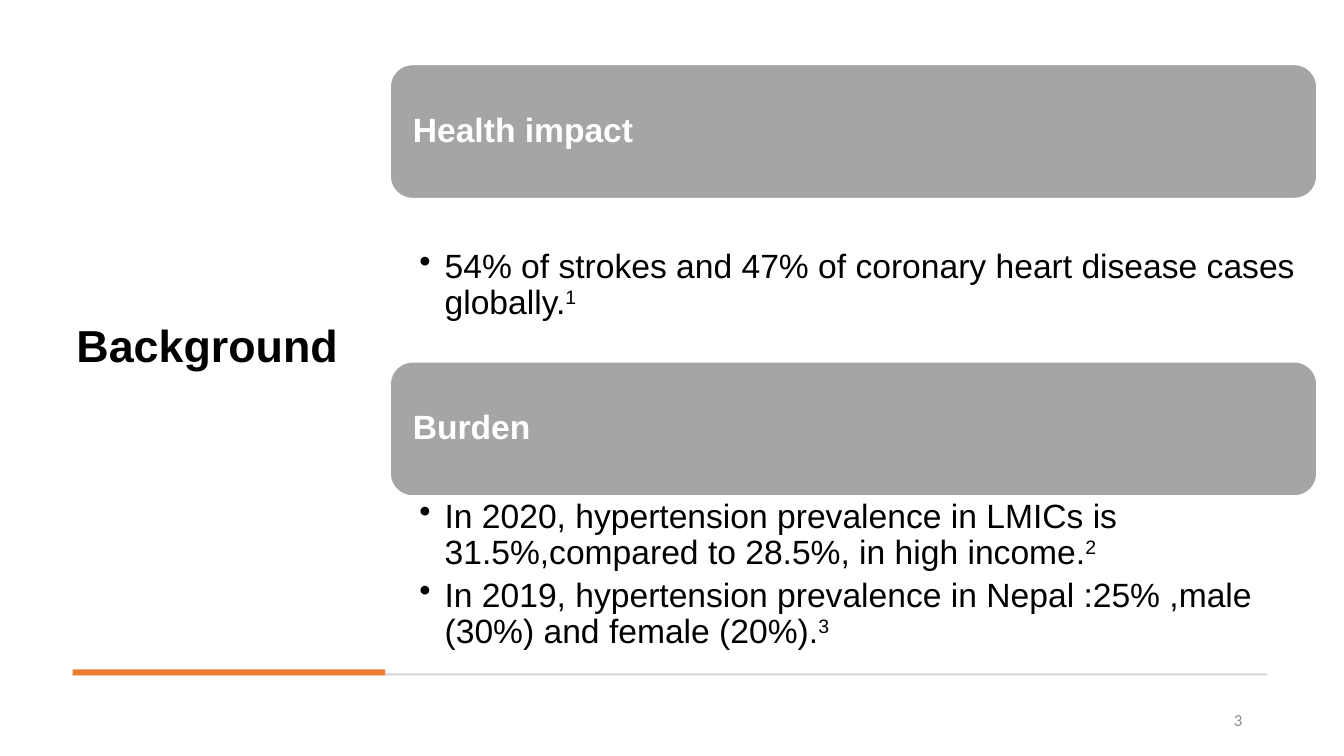
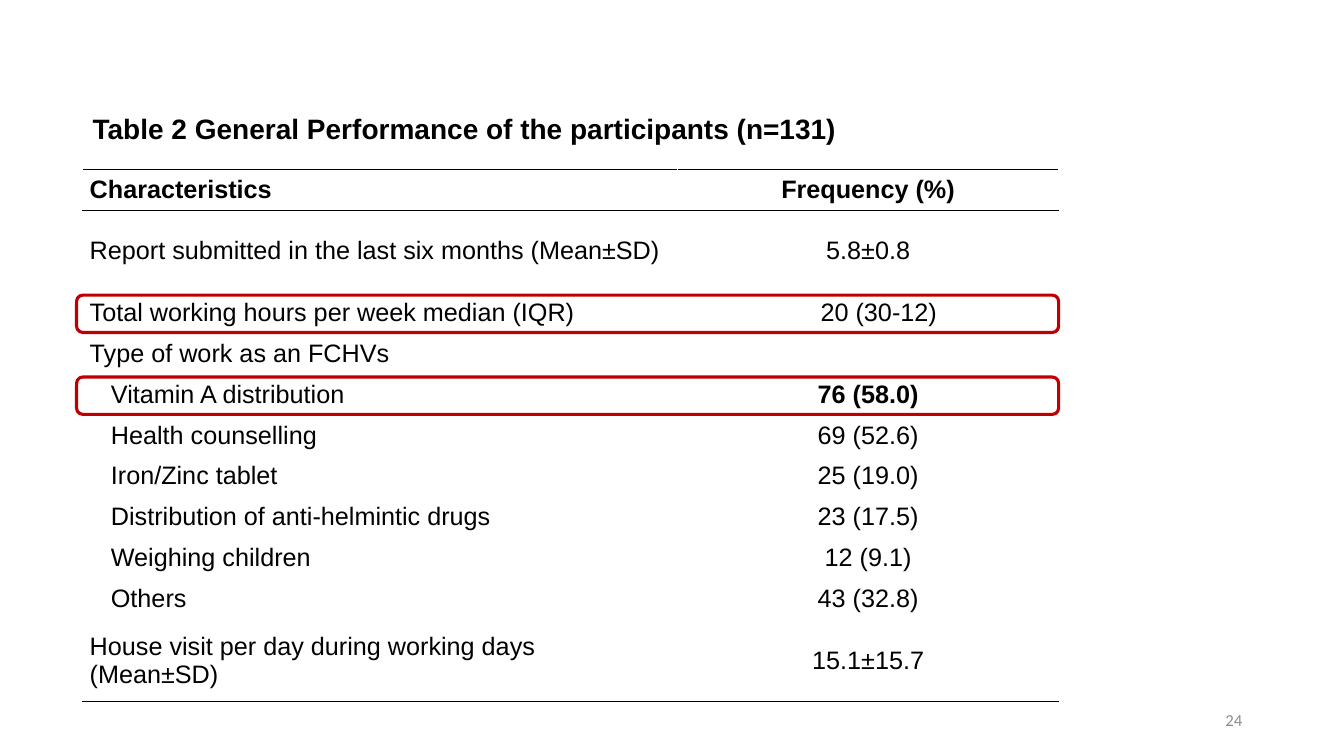
"""Build two slides on hypertension background and volunteer performance."""
from dataclasses import dataclass

from lxml.etree import SubElement
from pptx import Presentation
from pptx.dml.color import RGBColor
from pptx.enum.shapes import MSO_SHAPE as Shape
from pptx.enum.text import MSO_ANCHOR as Anchor, PP_ALIGN as Align
from pptx.oxml.ns import qn
from pptx.util import Inches, Pt

PANELS = [
    ("Health impact", 1.62, 0.5, [
        ("54% of strokes and 47% of coronary heart disease cases globally.", "1"),
    ]),
    ("Burden", 1.55, 0.03, [
        ("In 2020, hypertension prevalence in LMICs is 31.5%,compared to 28.5%, in high income.", "2"),
        ("In 2019, hypertension prevalence in Nepal :25% ,male (30%) and female (20%).", "3"),
    ]),
]
TABLE_TITLE = "Table 2 General Performance of the participants (n=131)"
ROWS = [
    ("Characteristics", "Frequency (%)"),
    ("Report submitted in the last six months (Mean±SD)", "5.8±0.8"),
    ("Total working hours per week median (IQR)", "20 (30-12)"),
    ("Type of work as an FCHVs", ""),
    ("Vitamin A distribution", "76 (58.0)"),
    ("Health counselling", "69 (52.6)"),
    ("Iron/Zinc tablet", "25 (19.0)"),
    ("Distribution of anti-helmintic drugs", "23 (17.5)"),
    ("Weighing children", "12 (9.1)"),
    ("Others", "43 (32.8)"),
    ("House visit per day during working days (Mean±SD)", "15.1±15.7"),
]
ROW_UNITS = [1, 2, 1, 1, 1, 1, 1, 1, 1, 1, 2]
BOLD_CELLS = {(0, 0), (0, 1), (4, 1)}
INDENTED_CELLS = {(2, 1)} | {(row, 0) for row in range(4, 10)}
RULES = {0: ("a:lnT", "a:lnB"), 1: ("a:lnT",), 10: ("a:lnB",)}
CALLOUT_ROWS = (2, 4)


@dataclass(frozen=True)
class Theme:
    """Hold the shared colours, fonts and type sizes."""

    font: str = "Arial"
    number_font: str = "Calibri"
    black: str = "000000"
    white: str = "FFFFFF"
    panel: str = "A5A5A5"
    accent: str = "ED7D31"
    rule: str = "D5D5D5"
    callout: str = "C00000"
    number: str = "8C8C8C"
    title_size: int = 32
    body_size: int = 24
    caption_size: int = 20
    cell_size: int = 18
    number_size: int = 12


THEME = Theme()


def apply(target, **values):
    """Set attributes from a dict of format values."""
    for name, value in values.items():
        setattr(target, name, value)


def add_span(para, text, size, color=THEME.black, bold=False, font=THEME.font):
    """Append one formatted run to a paragraph."""
    span = para.add_run()
    span.text = text
    apply(span.font, name=font, size=Pt(size), bold=bold)
    span.font.color.rgb = RGBColor.from_string(color)
    return span


def set_frame(box, insets=(0.1, 0.05, 0.1, 0.05), anchor=Anchor.MIDDLE):
    """Wrap the text of a box and set its insets and anchor."""
    frame = box.text_frame
    sides = ("margin_left", "margin_top", "margin_right", "margin_bottom")
    apply(frame, word_wrap=True, vertical_anchor=anchor,
          **{side: Inches(inset) for side, inset in zip(sides, insets)})
    return frame


def add_text(page, area, text, size, align=Align.LEFT, **style):
    """Add a text box with one line of middle-anchored text."""
    para = set_frame(page.shapes.add_textbox(*map(Inches, area))).paragraphs[0]
    apply(para, alignment=align, line_spacing=0.9)
    add_span(para, text, size, **style)


def add_block(page, kind, area, fill=None, line=None, width=1):
    """Add a preset shape with optional fill and outline."""
    box = page.shapes.add_shape(kind, *map(Inches, area))
    box.shadow.inherit = False
    for paint, color in ((box.fill, fill), (box.line.fill, line)):
        if color:
            paint.solid()
            paint.fore_color.rgb = RGBColor.from_string(color)
        else:
            paint.background()
    if line:
        box.line.width = Pt(width)
    return box


def add_bullet(para, text, note):
    """Write a bullet with a superscript reference."""
    apply(para, line_spacing=0.9, space_after=Pt(5))
    props = para._p.get_or_add_pPr()
    props.set("marL", str(Inches(0.25)))
    props.set("indent", str(-Inches(0.25)))
    SubElement(props, qn("a:buChar"), char="•")
    add_span(para, text, THEME.body_size)
    add_span(para, note, THEME.body_size).font._element.set("baseline", "30000")


def add_panels(page, left=3.87, top=0.64, width=9.19, header=1.33):
    """Stack headed panels, each followed by its bullets."""
    for heading, height, inset, bullets in PANELS:
        box = add_block(page, Shape.ROUNDED_RECTANGLE, (left, top, width, header),
                        THEME.panel, THEME.white)
        para = set_frame(box, (0.16, 0.1, 0.16, 0.1)).paragraphs[0]
        apply(para, alignment=Align.LEFT, line_spacing=0.9)
        add_span(para, heading, THEME.body_size, THEME.white, True)
        top += header
        body = page.shapes.add_textbox(*map(Inches, (left, top, width, height)))
        frame = set_frame(body, (0.29, inset, 0.19, 0.03), Anchor.TOP)
        for index, bullet in enumerate(bullets):
            add_bullet(frame.add_paragraph() if index else frame.paragraphs[0], *bullet)
        top += height


def add_border(cell, tag):
    """Draw a thin black rule on one side of a cell."""
    props = cell._tc.get_or_add_tcPr()
    edge = SubElement(props, qn(tag), w=str(Pt(1)))
    SubElement(SubElement(edge, qn("a:solidFill")), qn("a:srgbClr"), val=THEME.black)


def fill_cell(cell, row, column, text):
    """Write and format one table cell."""
    indent = 0.21 if (row, column) in INDENTED_CELLS else 0
    apply(cell, vertical_anchor=Anchor.MIDDLE, margin_left=Inches(0.07 + indent),
          margin_right=Inches(0.07 if column else 0.1), margin_top=0, margin_bottom=0)
    for tag in RULES.get(row, ()):
        add_border(cell, tag)
    cell.fill.background()
    para = cell.text_frame.paragraphs[0]
    para.alignment = Align.CENTER if column else Align.LEFT
    add_span(para, text, THEME.cell_size, bold=(row, column) in BOLD_CELLS)


def add_performance_table(page, left=0.82, top=1.68, widths=(5.9, 3.78), height=5.28):
    """Add the table and outline its highlighted rows."""
    unit = height / sum(ROW_UNITS)
    area = map(Inches, (left, top, sum(widths), height))
    table = page.shapes.add_table(len(ROWS), len(widths), *area).table
    apply(table, first_row=False, horz_banding=False)
    for column, width in zip(table.columns, widths):
        column.width = Inches(width)
    for row, (units, texts) in enumerate(zip(ROW_UNITS, ROWS)):
        table.rows[row].height = Inches(units * unit)
        for column, text in enumerate(texts):
            fill_cell(table.cell(row, column), row, column, text)
    for row in CALLOUT_ROWS:
        row_top = top + unit * sum(ROW_UNITS[:row])
        add_block(page, Shape.ROUNDED_RECTANGLE,
                  (left - 0.06, row_top + 0.03, sum(widths) + 0.06, 0.37),
                  line=THEME.callout, width=2.25)


def add_page(deck, number, title, area, size):
    """Add a blank page with its title and page number."""
    page = deck.slides.add_slide(deck.slide_layouts[6])
    add_text(page, area, title, size, bold=True)
    add_text(page, (9.42, 6.95, 3, 0.4), number, THEME.number_size, Align.RIGHT,
             color=THEME.number, font=THEME.number_font)
    return page


def main():
    """Build and save the deck."""
    deck = Presentation()
    apply(deck, slide_width=Inches(13.33), slide_height=Inches(7.5))
    page = add_page(deck, "3", "Background", (0.66, 0.47, 3.15, 5.97), THEME.title_size)
    add_block(page, Shape.RECTANGLE, (0.72, 6.68, 11.85, 0.02), THEME.rule)
    add_block(page, Shape.RECTANGLE, (0.72, 6.64, 3.1, 0.06), THEME.accent)
    add_panels(page)
    page = add_page(deck, "24", TABLE_TITLE, (0.82, 0.85, 9.67, 0.88), THEME.caption_size)
    add_performance_table(page)
    deck.save("out.pptx")


if __name__ == "__main__":
    main()
